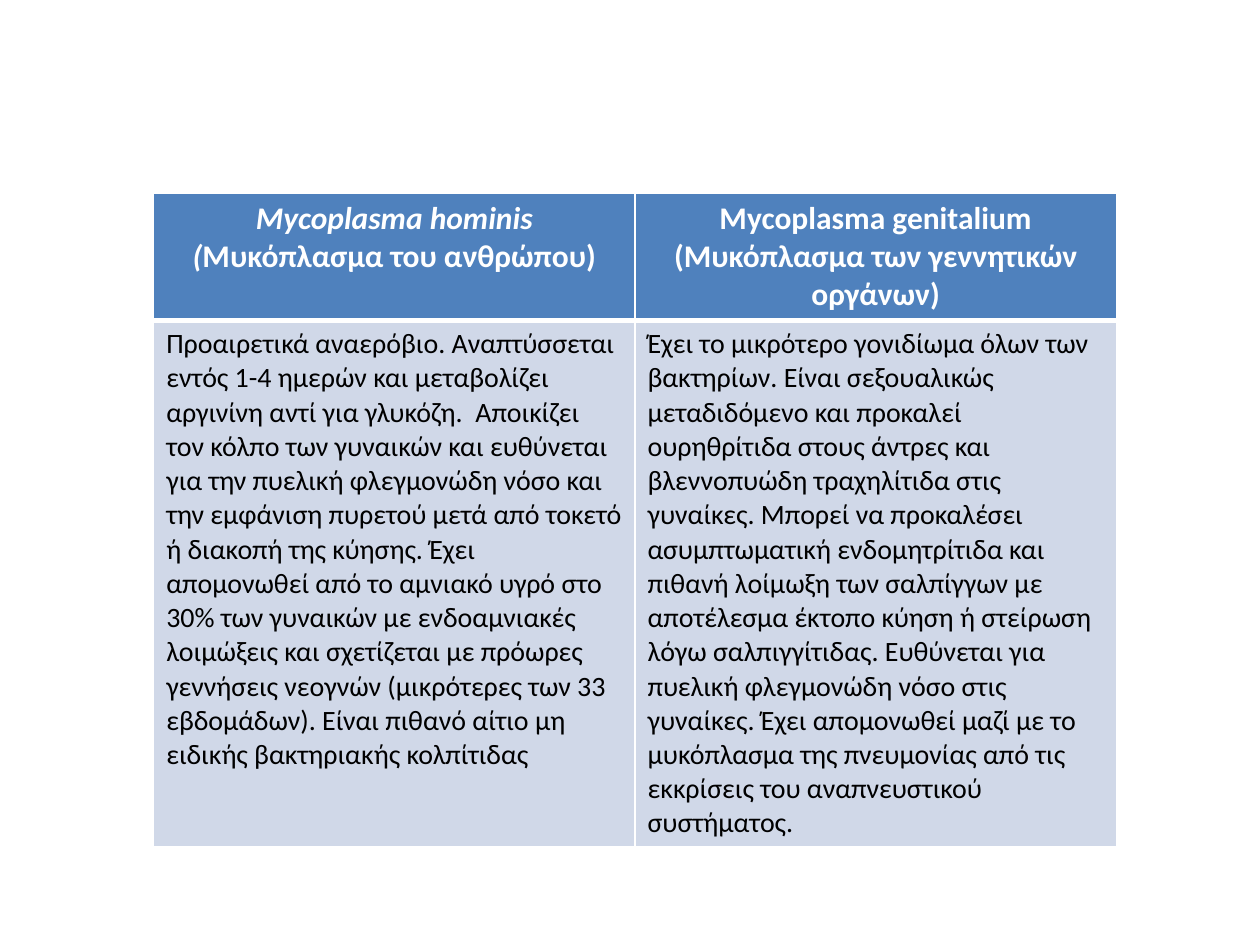
from dataclasses import dataclass

from lxml.etree import SubElement
from pptx import Presentation
from pptx.dml.color import RGBColor
from pptx.enum.text import PP_ALIGN
from pptx.oxml.ns import qn
from pptx.util import Inches, Pt


@dataclass(frozen=True)
class Theme:
    font: str = "Calibri"
    head_size: int = 18
    body_size: int = 16
    head_fill: str = "4F81BD"
    body_fill: str = "D0D8E8"
    light: str = "FFFFFF"
    dark: str = "000000"
    thin: int = 1
    thick: int = 3


THEME = Theme()

# Each heading is a list of lines; each line is a list of (text, italic) runs.
HEADS = [
    [[("Mycoplasma hominis", True)],
     [("(", True), ("Μυκόπλασμα του ανθρώπου)", False)]],
    [[("Mycoplasma genitalium", False)],
     [("(Μυκόπλασμα των γεννητικών οργάνων)", False)]],
]

NOTES = [
    "Προαιρετικά αναερόβιο. Αναπτύσσεται εντός 1-4 ημερών και μεταβολίζει "
    "αργινίνη αντί για γλυκόζη.  Αποικίζει τον κόλπο των γυναικών και "
    "ευθύνεται για την πυελική φλεγμονώδη νόσο και την εμφάνιση πυρετού μετά "
    "από τοκετό ή διακοπή της κύησης. Έχει απομονωθεί από το αμνιακό υγρό στο "
    "30% των γυναικών με ενδοαμνιακές λοιμώξεις και σχετίζεται με πρόωρες "
    "γεννήσεις νεογνών (μικρότερες των 33 εβδομάδων). Είναι πιθανό αίτιο μη "
    "ειδικής βακτηριακής κολπίτιδας",
    "Έχει το μικρότερο γονιδίωμα όλων των βακτηρίων. Είναι σεξουαλικώς "
    "μεταδιδόμενο και προκαλεί ουρηθρίτιδα στους άντρες και βλεννοπυώδη "
    "τραχηλίτιδα στις γυναίκες. Μπορεί να προκαλέσει ασυμπτωματική "
    "ενδομητρίτιδα και πιθανή λοίμωξη των σαλπίγγων με αποτέλεσμα έκτοπο "
    "κύηση ή στείρωση λόγω σαλπιγγίτιδας. Ευθύνεται για πυελική φλεγμονώδη "
    "νόσο στις γυναίκες. Έχει απομονωθεί μαζί με το μυκόπλασμα της πνευμονίας "
    "από τις εκκρίσεις του αναπνευστικού συστήματος.",
]


def add_edges(cell, widths):
    """Draw the cell's borders; widths maps side letters to points."""
    props = cell._tc.get_or_add_tcPr()
    for side, width in widths.items():
        line = SubElement(props, qn(f"a:ln{side}"), w=str(Pt(width)))
        fill = SubElement(line, qn("a:solidFill"))
        SubElement(fill, qn("a:srgbClr"), val=THEME.light)


def paint(cell, color):
    cell.fill.solid()
    cell.fill.fore_color.rgb = RGBColor.from_string(color)


def write(cell, lines, align, color, style):
    frame = cell.text_frame
    for i, line in enumerate(lines):
        para = frame.add_paragraph() if i else frame.paragraphs[0]
        para.alignment = align
        for text, slant in line:
            run = para.add_run()
            run.text = text
            run.font.color.rgb = RGBColor.from_string(color)
            for name, value in {**style, "italic": slant}.items():
                setattr(run.font, name, value)


def fill_head(cell, lines):
    thin = THEME.thin
    add_edges(cell, {"L": thin, "R": thin, "T": thin, "B": THEME.thick})
    paint(cell, THEME.head_fill)
    style = {"name": THEME.font, "size": Pt(THEME.head_size), "bold": True}
    write(cell, lines, PP_ALIGN.CENTER, THEME.light, style)


def fill_body(cell, text):
    thin = THEME.thin
    add_edges(cell, {"L": thin, "R": thin, "T": THEME.thick, "B": thin})
    paint(cell, THEME.body_fill)
    style = {"name": THEME.font, "size": Pt(THEME.body_size), "bold": False}
    write(cell, [[(text, False)]], PP_ALIGN.LEFT, THEME.dark, style)


def add_grid(slide):
    table = slide.shapes.add_table(
        2, len(HEADS), Inches(1.22), Inches(1.53), Inches(7.64), Inches(5.1)
    ).table
    for row, height in zip(table.rows, (1, 4.1)):
        row.height = Inches(height)
    for col, (head, note) in enumerate(zip(HEADS, NOTES)):
        fill_head(table.cell(0, col), head)
        fill_body(table.cell(1, col), note)


def main():
    deck = Presentation()
    deck.slide_width, deck.slide_height = Inches(10), Inches(7.5)
    add_grid(deck.slides.add_slide(deck.slide_layouts[6]))
    deck.save("out.pptx")


if __name__ == "__main__":
    main()
